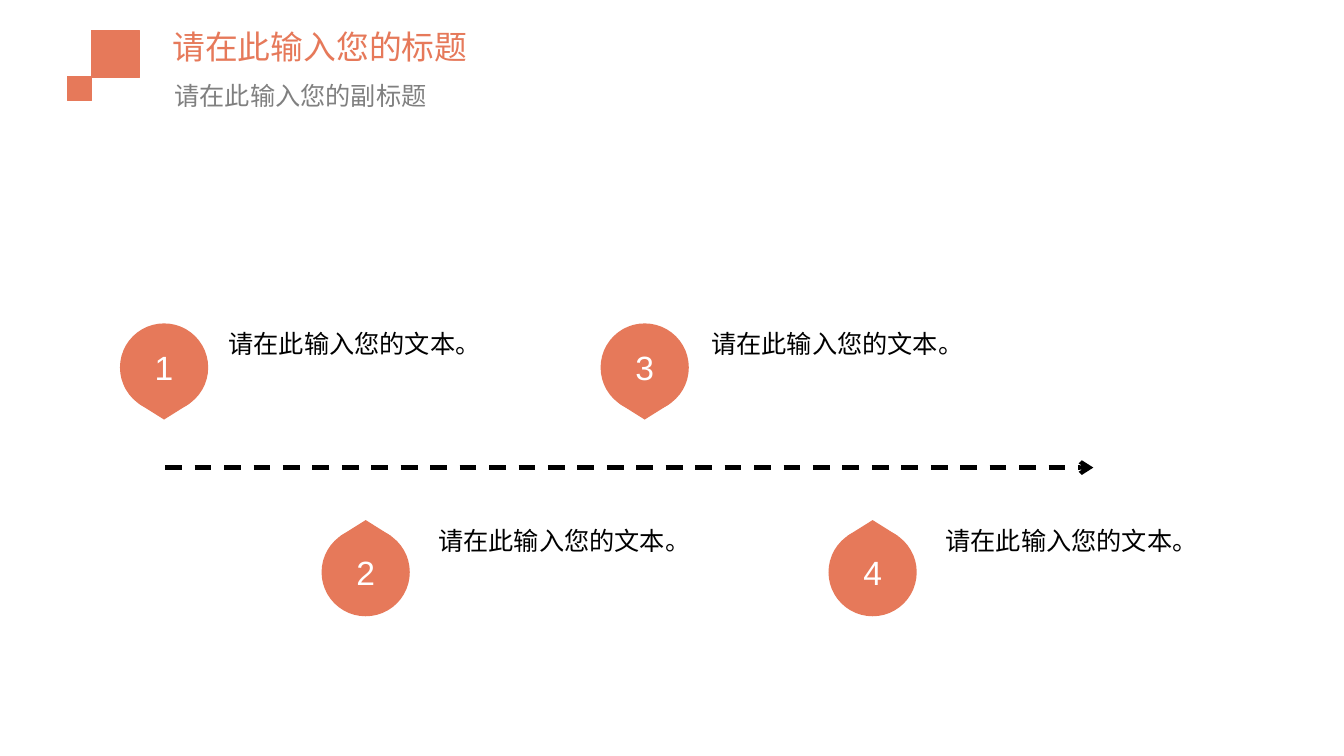
from lxml import etree
from pptx import Presentation
from pptx.dml.color import RGBColor
from pptx.enum.dml import MSO_LINE
from pptx.enum.shapes import MSO_CONNECTOR, MSO_SHAPE
from pptx.enum.text import MSO_ANCHOR, MSO_AUTO_SIZE, PP_ALIGN
from pptx.oxml.ns import qn
from pptx.util import Pt

CORAL = RGBColor(0xE6, 0x79, 0x5A)
GRAY = RGBColor(0x80, 0x80, 0x80)
BLACK = RGBColor(0, 0, 0)
WHITE = RGBColor(255, 255, 255)
LEFT, CENTER = PP_ALIGN.LEFT, PP_ALIGN.CENTER
TOP, MIDDLE = MSO_ANCHOR.TOP, MSO_ANCHOR.MIDDLE
SQUARE, CIRCLE, TIP = MSO_SHAPE.RECTANGLE, MSO_SHAPE.OVAL, MSO_SHAPE.FLOWCHART_MERGE
STRAIGHT, DASH = MSO_CONNECTOR.STRAIGHT, MSO_LINE.DASH
NO_AUTOFIT = MSO_AUTO_SIZE.NONE

FONT = "Arial"
STEP_TEXT = "请在此输入您的文本。"
CIRCLE_SIZE = 63
TIP_WIDTH, TIP_HEIGHT = 36.7, 11.5
UPPER_TOP, LOWER_TOP = 231, 371.5
DROP_HEIGHT = 68.7

# number, drop left, text left
STEPS = [
    ("1", 85.7, 156.2),
    ("2", 229.7, 306),
    ("3", 429, 501),
    ("4", 591.8, 668.2),
]


def set_all(target, values):
    for attribute, value in values.items():
        setattr(target, attribute, value)


class TimelineSlide:
    def __init__(self, slide):
        self.slide = slide

    def label(self, holder, text, size, color, align=LEFT, anchor=TOP, spacing=1.0):
        frame = holder.text_frame
        frame.text = text
        set_all(frame, {
            "word_wrap": True, "auto_size": NO_AUTOFIT, "vertical_anchor": anchor,
            "margin_left": Pt(7.2), "margin_right": Pt(7.2),
            "margin_top": Pt(3.6), "margin_bottom": Pt(3.6),
        })
        paragraph = frame.paragraphs[0]
        set_all(paragraph, {
            "alignment": align, "line_spacing": spacing, "space_before": Pt(0),
        })
        font = paragraph.runs[0].font
        set_all(font, {"name": FONT, "size": Pt(size), "bold": False})
        font.color.rgb = color

    def placeholder(self, holder, box, text, size, color, **layout):
        for side, length in zip(("left", "top", "width", "height"), box):
            setattr(holder, side, Pt(length))
        self.label(holder, text, size, color, **layout)

    def textbox(self, box, text):
        holder = self.slide.shapes.add_textbox(*map(Pt, box))
        self.label(holder, text, 18, BLACK)

    def shape(self, kind, box, outlined=False):
        shape = self.slide.shapes.add_shape(kind, *map(Pt, box))
        shape.shadow.inherit = False
        shape.fill.solid()
        shape.fill.fore_color.rgb = CORAL
        if outlined:
            shape.line.color.rgb = CORAL
            shape.line.width = Pt(0.75)
        else:
            shape.line.fill.background()
        return shape

    def dashed_arrow(self, start, end):
        arrow = self.slide.shapes.add_connector(STRAIGHT, *map(Pt, start + end))
        set_all(arrow.line, {"width": Pt(3), "dash_style": DASH})
        arrow.line.color.rgb = BLACK
        properties = arrow.element.spPr
        etree.SubElement(properties.find(qn("a:ln")), qn("a:tailEnd"), type="arrow")
        etree.SubElement(properties, qn("a:effectLst"))

    def drop(self, number, left, top, points_up):
        """Draw a numbered circle whose tip points at the timeline."""
        circle_top = top + DROP_HEIGHT - CIRCLE_SIZE if points_up else top
        tip_top = top if points_up else top + DROP_HEIGHT - TIP_HEIGHT
        tip_left = left + (CIRCLE_SIZE - TIP_WIDTH) / 2
        circle = self.shape(CIRCLE, (left, circle_top, CIRCLE_SIZE, CIRCLE_SIZE))
        self.label(circle, number, 24, WHITE, align=CENTER, anchor=MIDDLE)
        tip = self.shape(TIP, (tip_left, tip_top, TIP_WIDTH, TIP_HEIGHT))
        tip.rotation = 180 if points_up else 0


def main():
    deck = Presentation()
    deck.slide_width, deck.slide_height = Pt(960), Pt(540)
    slide = deck.slides.add_slide(deck.slide_layouts[0])
    timeline = TimelineSlide(slide)

    timeline.shape(SQUARE, (65.5, 21.6, 34, 34), outlined=True)
    timeline.shape(SQUARE, (48.2, 54.7, 17.3, 17.3), outlined=True)
    timeline.placeholder(slide.shapes.title, (116, 10, 688, 46),
                         "请在此输入您的标题", 23.4, CORAL, anchor=MIDDLE)
    timeline.placeholder(slide.placeholders[1], (117.4, 56.2, 687, 39),
                         "请在此输入您的副标题", 18, GRAY, spacing=0.9)

    timeline.dashed_arrow((118, 334), (781, 334))
    for index, (number, drop_left, text_left) in enumerate(STEPS):
        below = index % 2 == 1
        top = LOWER_TOP if below else UPPER_TOP
        timeline.drop(number, drop_left, top, points_up=below)
        timeline.textbox((text_left, top, 206, 63), STEP_TEXT)

    deck.save("out.pptx")


if __name__ == "__main__":
    main()
